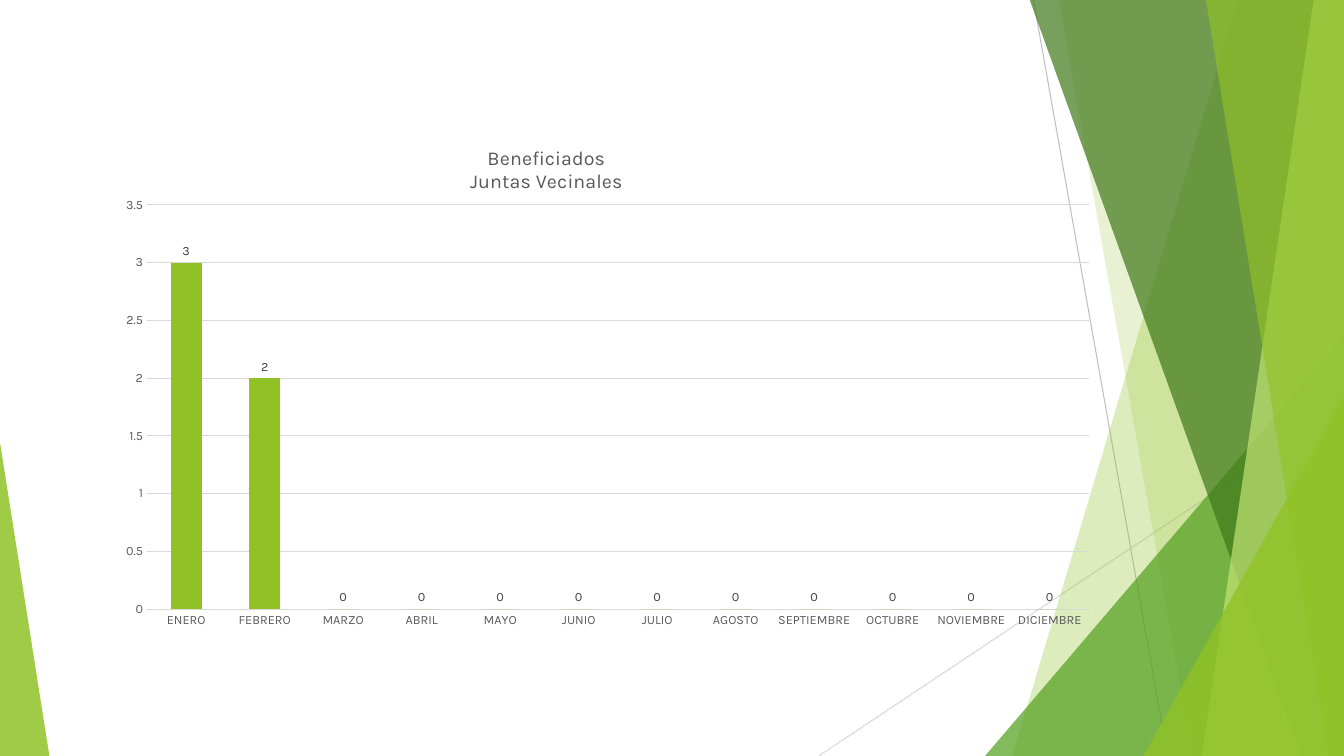
from lxml import etree
from pptx import Presentation
from pptx.chart.data import CategoryChartData
from pptx.dml.color import RGBColor
from pptx.enum.chart import XL_CHART_TYPE, XL_LABEL_POSITION, XL_TICK_MARK
from pptx.enum.shapes import MSO_CONNECTOR, MSO_SHAPE
from pptx.oxml import parse_xml
from pptx.oxml.ns import nsdecls, qn
from pptx.util import Inches, Pt

LIME = RGBColor(0x90, 0xC2, 0x26)
GREEN = RGBColor(0x54, 0xA0, 0x21)
DARK_GREEN = RGBColor(0x3F, 0x78, 0x19)
PALE_LIME = RGBColor(0xC0, 0xE4, 0x74)
MID_GREY = RGBColor(0xBF, 0xBF, 0xBF)
LIGHT_GREY = RGBColor(0xD9, 0xD9, 0xD9)
AXIS_GREY = RGBColor(0x59, 0x59, 0x59)
LABEL_GREY = RGBColor(0x40, 0x40, 0x40)
FONT = "Karla"
RIGHT, TOP, BOTTOM = 13.33, -0.01, 7.5


def paint(shape, color, opacity):
    """Fill a borderless, shadowless shape; opacity is in percent."""
    shape.shadow.inherit = False
    shape.line.fill.background()
    shape.fill.solid()
    shape.fill.fore_color.rgb = color
    solid_color = shape.fill._xPr.find(qn("a:solidFill"))[0]
    etree.SubElement(solid_color, qn("a:alpha")).set("val", str(opacity * 1000))


def place(parent, index, **fractions):
    """Give a chart part a manual layout in fractions of the chart."""
    for old_layout in parent.findall(qn("c:layout")):
        parent.remove(old_layout)
    target = '<c:layoutTarget val="inner"/>' if "w" in fractions else ""
    modes = "".join(f'<c:{key}Mode val="edge"/>' for key in "xy")
    sizes = "".join(f'<c:{key} val="{value}"/>' for key, value in fractions.items())
    parent.insert(index, parse_xml(
        f'<c:layout {nsdecls("c")}><c:manualLayout>{target}{modes}{sizes}'
        "</c:manualLayout></c:layout>"))


presentation = Presentation()
presentation.slide_width = Inches(RIGHT)
presentation.slide_height = Inches(BOTTOM)
slide = presentation.slides.add_slide(presentation.slide_layouts[6])
shapes = slide.shapes

# Thin diagonal lines
for x1, y1, x2, y2, color in [
    (10.25, 0, 11.58, BOTTOM, MID_GREY),
    (RIGHT, 4.03, 8.12, BOTTOM, LIGHT_GREY),
]:
    diagonal = shapes.add_connector(
        MSO_CONNECTOR.STRAIGHT, Inches(x1), Inches(y1), Inches(x2), Inches(y2))
    diagonal.line.color.rgb = color
    diagonal.line.width = Pt(0.75)
    etree.SubElement(diagonal._element.spPr, qn("a:effectLst"))

# Translucent facets: a band runs from (top x, bottom x) to the right edge,
# a triangle is (left, top, width, height, apex position)
for facet, color, opacity in [
    ((12.28, 10.04), LIME, 30),
    ((10.5, 11.83), LIME, 20),
    ((9.77, 3.33, 3.56, 4.17, 1), GREEN, 72),
    ((10.21, 12.91), DARK_GREEN, 70),
    ((13.03, 11.92), PALE_LIME, 70),
    ((11.96, 13.18), LIME, 65),
    ((11.34, 3.93, 1.99, 3.57, 1), LIME, 80),
    ((0, 4.39, 0.49, 3.11, 0), LIME, 85),
]:
    if len(facet) == 2:
        top_x, bottom_x = facet
        outline = shapes.build_freeform(Inches(top_x), Inches(TOP))
        outline.add_line_segments([
            (Inches(x), Inches(y))
            for x, y in [(RIGHT, TOP), (RIGHT, BOTTOM), (bottom_x, BOTTOM)]])
        shape = outline.convert_to_shape()
    else:
        *box, apex = facet
        shape = shapes.add_shape(
            MSO_SHAPE.ISOSCELES_TRIANGLE, *[Inches(length) for length in box])
        shape.adjustments[0] = apex
    paint(shape, color, opacity)

# Monthly beneficiaries
months = ["ENERO", "FEBRERO", "MARZO", "ABRIL", "MAYO", "JUNIO", "JULIO",
          "AGOSTO", "SEPTIEMBRE", "OCTUBRE", "NOVIEMBRE", "DICIEMBRE"]
beneficiaries = CategoryChartData()
beneficiaries.categories = months
beneficiaries.add_series("Series 1", [3, 2] + [0] * 10)
chart = shapes.add_chart(
    XL_CHART_TYPE.COLUMN_CLUSTERED, Inches(1.05), Inches(1.15),
    Inches(9.95), Inches(5.2), beneficiaries).chart
chart.has_legend = False
chart.font.name = FONT
chart.font.size = Pt(10)

chart.has_title = True
title = chart.chart_title
title.include_in_layout = False
title.text_frame.text = "Beneficiados\nJuntas Vecinales"
for paragraph in title.text_frame.paragraphs:
    paragraph.font.name = FONT
    paragraph.font.size = Pt(14)
    paragraph.font.bold = False
    paragraph.font.color.rgb = AXIS_GREY
place(title._element, 1, x=0.36, y=0.05)
place(chart._chartSpace.chart.plotArea, 0, x=0.041, y=0.17, w=0.939, h=0.771)

for axis in (chart.category_axis, chart.value_axis):
    axis.major_tick_mark = XL_TICK_MARK.NONE
    axis.minor_tick_mark = XL_TICK_MARK.NONE
    axis.format.line.fill.background()
    axis.tick_labels.font.name = FONT
    axis.tick_labels.font.size = Pt(9)
    axis.tick_labels.font.color.rgb = AXIS_GREY
chart.value_axis.minimum_scale = 0
chart.value_axis.maximum_scale = 3.5
chart.value_axis.major_unit = 0.5
gridline = chart.value_axis.major_gridlines.format.line
gridline.color.rgb = LIGHT_GREY
gridline.width = Pt(0.75)

columns = chart.plots[0]
columns.gap_width = 150
columns.vary_by_categories = False
columns.series[0].format.fill.solid()
columns.series[0].format.fill.fore_color.rgb = LIME
labels = columns.series[0].data_labels
labels.show_value = True
labels.position = XL_LABEL_POSITION.OUTSIDE_END
labels.font.name = FONT
labels.font.size = Pt(9)
labels.font.color.rgb = LABEL_GREY

presentation.save("out.pptx")
